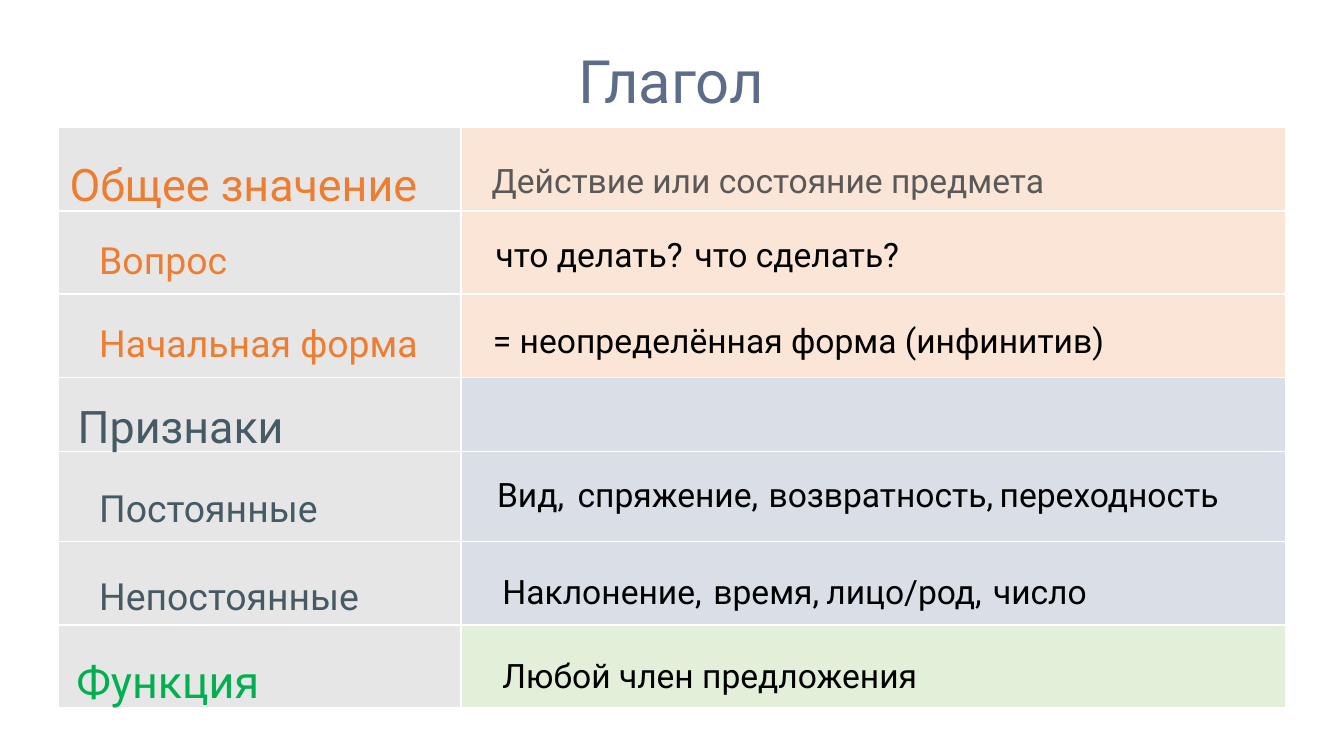
from lxml.etree import SubElement as Sub
from pptx import Presentation
from pptx.dml.color import RGBColor as Rgb
from pptx.enum.text import MSO_ANCHOR as Anchor, MSO_AUTO_SIZE as Fit, PP_ALIGN as Align
from pptx.oxml.ns import qn
from pptx.util import Inches, Pt

HUES = {
    "title": "5D6C89", "orange": "ED7D31", "slate": "455A64", "green": "00B050",
    "black": "000000", "dim": "595959", "white": "FFFFFF",
    "gray": "E7E6E6", "peach": "FBE5D6", "blue": "DADEE6", "mint": "E2F0D9",
}


class Deck:
    """Slide on a grid of 100 columns; rows are as tall as columns are wide."""

    font = "Roboto"
    unit = 0.1

    def __init__(self, cols, rows):
        self.prs = Presentation()
        self.prs.slide_width = self.grid(cols)
        self.prs.slide_height = self.grid(rows)
        self.slide = self.prs.slides.add_slide(self.prs.slide_layouts[5])

    def grid(self, n):
        return Inches(n * self.unit)

    def hue(self, name):
        return Rgb.from_string(HUES[name])

    def style(self, shape, text, size, hue, anchor, space=None, align=Align.LEFT):
        frame = shape.text_frame
        frame.text = text
        frame.word_wrap = True
        frame.auto_size = Fit.NONE
        frame.vertical_anchor = anchor
        para = frame.paragraphs[0]
        para.alignment = align
        if space:
            para.line_spacing = space
        font = para.runs[0].font
        font.name, font.size = self.font, Pt(size)
        font.color.rgb = self.hue(hue)

    def title(self, text, x, y, w, h):
        shape = self.slide.shapes.title
        shape.left, shape.top, shape.width, shape.height = map(self.grid, (x, y, w, h))
        self.style(shape, text, 32, "title", Anchor.BOTTOM, align=Align.CENTER)

    def label(self, text, x, y, w, size=18, hue="black", space=1.5):
        box = self.slide.shapes.add_textbox(*map(self.grid, (x, y, w, 5.5)))
        self.style(box, text, size, hue, Anchor.MIDDLE, space)

    def edge(self, cell):
        props = cell._tc.get_or_add_tcPr()
        for spot, side in enumerate(("lnL", "lnR", "lnT", "lnB")):
            line = Sub(props, qn("a:" + side), w=str(Pt(1)))
            fill = Sub(line, qn("a:solidFill"))
            Sub(fill, qn("a:srgbClr"), val=HUES["white"])
            props.insert(spot, line)

    def table(self, x, y, cols, rows, fills):
        spot = map(self.grid, (x, y, sum(cols), sum(rows)))
        table = self.slide.shapes.add_table(len(rows), len(cols), *spot).table
        table.first_row = table.horz_banding = False
        for col, wide in zip(table.columns, cols):
            col.width = self.grid(wide)
        for row, tall, pair in zip(table.rows, rows, fills):
            row.height = self.grid(tall)
            for cell, hue in zip(row.cells, pair):
                cell.fill.solid()
                cell.fill.fore_color.rgb = self.hue(hue)
                self.edge(cell)


def main():
    deck = Deck(100, 56.25)
    deck.title("Глагол", 10.5, 3.6, 78.9, 5.5)

    # Colour table behind the text
    bands = ["peach"] * 3 + ["blue"] * 3 + ["mint"]
    deck.table(4.3, 9.5, (30, 61.35), (6.2, 6.2, 6.2, 5.5, 6.7, 6.2, 6.2),
               [("gray", band) for band in bands])

    # Left column: main headings, then the indented ones
    for text, x, y, w, hue in (
        ("Общее значение", 4.2, 9.9, 52.7, "orange"),
        ("Признаки", 4.8, 27.9, 52.1, "slate"),
        ("Функция", 4.7, 46.9, 27.9, "green"),
    ):
        deck.label(text, x, y, w, 24, hue)
    for text, y, hue in (
        ("Вопрос", 15.7, "orange"),
        ("Начальная форма", 21.9, "orange"),
        ("Постоянные", 34.2, "slate"),
        ("Непостоянные", 40.7, "slate"),
    ):
        deck.label(text, 6.4, y, 27.3, 20, hue)

    # Right column: each row holds one or more phrases
    deck.label("Действие или состояние предмета", 35.6, 9.9, 62.4, hue="dim")
    for y, space, words in (
        (15.4, 1.5, (("что делать?", 35.9, 16.9), ("что сделать?", 50.7, 28.4))),
        (21.8, 1.5, (("= неопределённая форма (инфинитив)", 35.7, 60),)),
        (34, None, (("Вид,", 36, 8.6), ("спряжение,", 42, 17.3),
                    ("возвратность,", 56.2, 20.1), ("переходность", 73.4, 19.3))),
        (40.5, 1.5, (("Наклонение,", 36.4, 17.9), ("время,", 52.1, 11.5),
                     ("лицо/род,", 60.5, 16.5), ("число", 72.9, 16.5))),
        (46.7, 1.5, (("Любой член предложения", 36.4, 41.3),)),
    ):
        for text, x, w in words:
            deck.label(text, x, y, w, space=space)

    deck.prs.save("out.pptx")


if __name__ == "__main__":
    main()
